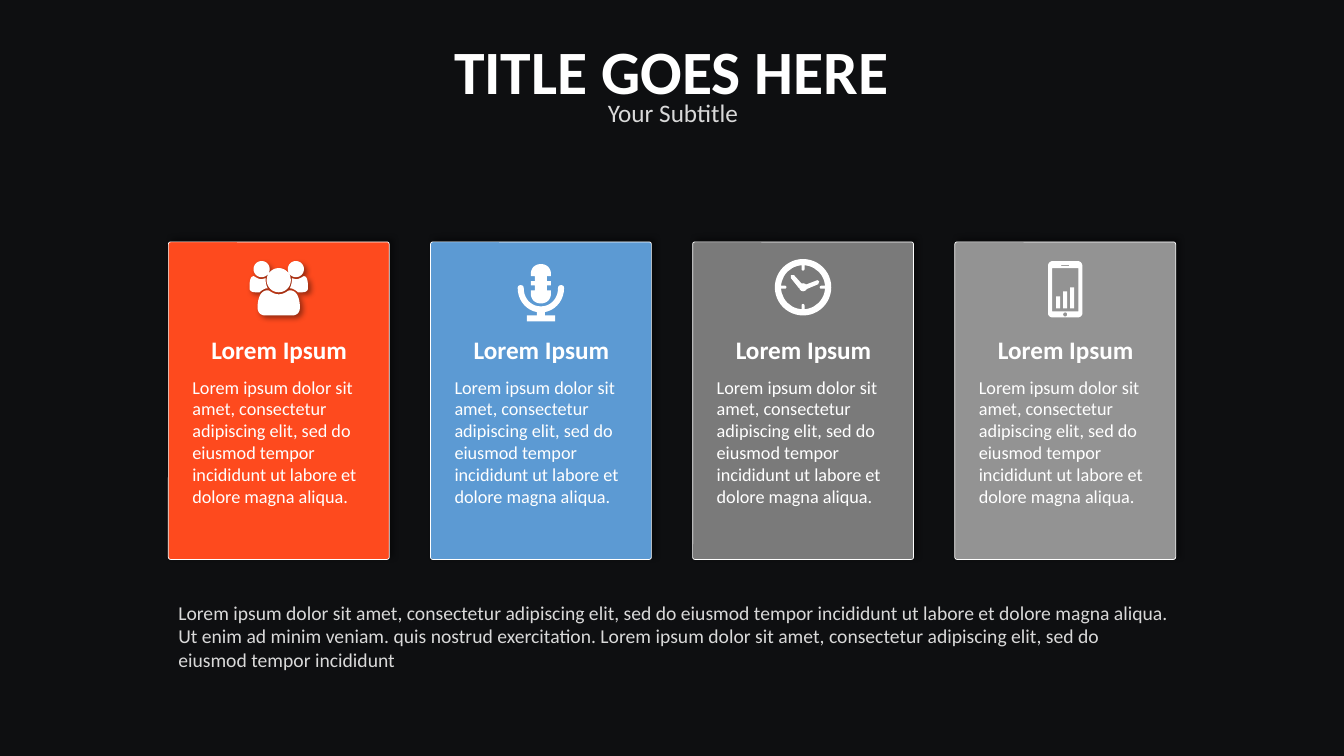
from dataclasses import dataclass
from math import cos, pi, sin

from lxml.etree import SubElement
from pptx import Presentation
from pptx.dml.color import RGBColor
from pptx.enum.shapes import MSO_SHAPE
from pptx.enum.text import MSO_AUTO_SIZE, PP_ALIGN
from pptx.oxml.ns import qn
from pptx.util import Inches, Pt


@dataclass(frozen=True)
class Theme:
    font: str = "Calibri"
    background: str = "0E0F11"
    white: str = "FFFFFF"
    muted: str = "D9D9D9"
    cards: tuple = ("FE4A1E", "5C9AD3", "7A7A7A", "939393")
    title: int = 44
    heading: int = 18
    summary: int = 14
    body: int = 13


THEME = Theme()
CARD_LEFT, CARD_TOP, CARD_PITCH = 1.67, 2.4, 2.6
CARD_WIDTH, CARD_HEIGHT = 2.19, 3.15
ICON_Y = 2.86
CARD_TEXT = ("Lorem ipsum dolor sit amet, consectetur adipiscing elit, sed do "
             "eiusmod tempor incididunt ut labore et dolore magna aliqua.")
SUMMARY = (CARD_TEXT + " Ut enim ad minim veniam. quis nostrud exercitation. "
           "Lorem ipsum dolor sit amet, consectetur adipiscing elit, sed do "
           "eiusmod tempor incididunt")


def add_text(s, text, left, top, width, height, size, color,
             bold=False, align=PP_ALIGN.LEFT):
    tf = s.shapes.add_textbox(Inches(left), Inches(top),
                              Inches(width), Inches(height)).text_frame
    tf.word_wrap = True
    tf.auto_size = MSO_AUTO_SIZE.SHAPE_TO_FIT_TEXT
    tf.text = text
    p = tf.paragraphs[0]
    p.alignment = align
    font = p.runs[0].font
    font.name, font.size, font.bold = THEME.font, Pt(size), bold
    font.color.rgb = RGBColor.from_string(color)


def paint(sp, color):
    sp.shadow.inherit = False
    sp.fill.solid()
    sp.fill.fore_color.rgb = RGBColor.from_string(color)
    sp.line.fill.background()


def add_shadow(sp, angle):
    effects = sp._element.spPr.find(qn("a:effectLst"))
    shadow = SubElement(effects, qn("a:outerShdw"), blurRad=str(Pt(4)),
                        dist=str(Pt(3)), dir=str(angle * 60000), rotWithShape="0")
    black = SubElement(shadow, qn("a:srgbClr"), val="000000")
    SubElement(black, qn("a:alpha"), val="40000")


def add_preset(s, kind, left, top, width, height, color=THEME.white, adjust=None):
    sp = s.shapes.add_shape(kind, Inches(left), Inches(top),
                            Inches(width), Inches(height))
    if adjust is not None:
        sp.adjustments[0] = adjust
    paint(sp, color)
    return sp


def outline(start, *segments):
    points = [start]
    for segment in segments:
        if len(segment) == 2:
            points.append(segment)
            continue
        x0, y0 = points[-1]
        x1, y1, x2, y2, x3, y3 = segment
        for t in (i / 10 for i in range(1, 11)):
            a, b, c, d = (1 - t)**3, 3 * t * (1 - t)**2, 3 * t * t * (1 - t), t**3
            points.append((a * x0 + b * x1 + c * x2 + d * x3,
                           a * y0 + b * y1 + c * y2 + d * y3))
    return points


def mirror(points):
    return [(-x, y) for x, y in reversed(points)]


def symmetric(*path):
    half = outline(*path)
    return half + mirror(half)


def circle(cx, cy, radius):
    return [(cx + radius * cos(i * pi / 20), cy + radius * sin(i * pi / 20))
            for i in range(40)]


def add_outline(s, cx, cy, *contours):
    builder = None
    for contour in contours:
        points = [(Inches(cx + x), Inches(cy + y)) for x, y in contour]
        if builder is None:
            builder = s.shapes.build_freeform(*points[0])
        else:
            builder.move_to(*points[0])
        builder.add_line_segments(points[1:], close=True)
    sp = builder.convert_to_shape()
    paint(sp, THEME.white)
    return sp


def add_people(s, cx, cy):
    side_body = outline(
        (-.19, .04), (-.23, .04), (-.26, .04, -.29, .03, -.29, 0),
        (-.29, -.04, -.29, -.12, -.25, -.12), (-.24, -.12, -.21, -.09, -.17, -.09),
        (-.13, -.1), (-.13, -.08), (-.13, -.05, -.12, -.02, -.11, 0),
        (-.14, 0, -.17, .02, -.19, .04))
    side_head = circle(-.17, -.19, .08)
    front_body = symmetric(
        (0, .27), (-.13, .27), (-.18, .27, -.21, .24, -.21, .19),
        (-.21, .12, -.19, .02, -.11, .02), (-.09, .02, -.06, .06, 0, .06))
    sp = add_outline(s, cx, cy, side_body, mirror(side_body), side_head,
                     mirror(side_head), front_body, circle(0, -.08, .12))
    add_shadow(sp, 45)


def add_microphone(s, cx, cy):
    add_outline(s, cx, cy, symmetric(
        (0, .24), (-.13, .24, -.23, .13, -.23, 0),
        (-.23, -.02, -.22, -.03, -.2, -.03), (-.18, -.03, -.17, -.02, -.17, 0),
        (-.17, .1, -.1, .18, 0, .18)))
    add_outline(s, cx, cy, symmetric(
        (0, -.24), (-.06, -.24, -.1, -.2, -.1, -.14), (-.1, -.12), (-.06, -.12),
        (-.06, -.07), (-.1, -.07), (-.1, -.03), (-.06, -.03), (-.06, .02),
        (-.1, .02), (-.1, .05), (-.1, .11, -.06, .15, 0, .15)))
    add_preset(s, MSO_SHAPE.RECTANGLE, cx - .04, cy + .22, .08, .07)
    add_preset(s, MSO_SHAPE.RECTANGLE, cx - .14, cy + .27, .28, .06)


def add_clock(s, cx, cy):
    add_outline(s, cx, cy, [(0, -.03), (-.04, 0), (-.12, -.1),
                            (-.12, -.13), (-.09, -.13)])
    add_outline(s, cx, cy, [(.03, .01), (.01, -.03), (.14, -.08),
                            (.16, -.07), (.15, -.04)])
    middle = cy - .01
    add_preset(s, MSO_SHAPE.DONUT, cx - .28, middle - .28, .56, .56, adjust=.11)
    add_preset(s, MSO_SHAPE.OVAL, cx - .04, middle - .04, .08, .08)
    for dx, dy in ((0, 1), (0, -1), (1, 0), (-1, 0)):
        width, height = (.11, .03) if dx else (.03, .11)
        add_preset(s, MSO_SHAPE.ROUNDED_RECTANGLE, cx + .22 * dx - width / 2,
                   middle + .22 * dy - height / 2, width, height, adjust=.5)


def add_phone(s, cx, cy):
    case = symmetric((0, -.27), (-.12, -.27), (-.15, -.27, -.17, -.25, -.17, -.22),
                     (-.17, .25), (-.17, .27, -.15, .29, -.12, .29), (0, .29))
    speaker = symmetric((0, -.23), (-.04, -.23), (-.04, -.22), (0, -.22))
    screen = symmetric((0, -.2), (-.13, -.2), (-.13, .23), (0, .23))
    add_outline(s, cx, cy, case, speaker, screen, circle(0, .26, .02))
    for i, height in enumerate((.12, .17, .21)):
        add_preset(s, MSO_SHAPE.RECTANGLE, cx - .09 + .07 * i,
                   cy + .2 - height, .04, height)


def add_card(s, left, color, add_icon):
    sp = add_preset(s, MSO_SHAPE.ROUNDED_RECTANGLE, left, CARD_TOP,
                    CARD_WIDTH, CARD_HEIGHT, color, .01)
    sp.line.color.rgb = RGBColor.from_string(THEME.white)
    sp.line.width = Pt(.5)
    add_shadow(sp, 315)
    add_icon(s, left + CARD_WIDTH / 2, ICON_Y)
    add_text(s, "Lorem Ipsum", left + .1, 3.27, 2, .4, THEME.heading,
             THEME.white, True, PP_ALIGN.CENTER)
    add_text(s, CARD_TEXT, left + .14, 3.68, 2, 1.41, THEME.body, THEME.white)


def main():
    prs = Presentation()
    prs.slide_width, prs.slide_height = Inches(13.33), Inches(7.5)
    s = prs.slides.add_slide(prs.slide_layouts[6])
    s.background.fill.solid()
    s.background.fill.fore_color.rgb = RGBColor.from_string(THEME.background)
    add_text(s, "TITLE GOES HERE", 3.65, .28, 6.02, .84, THEME.title,
             THEME.white, True, PP_ALIGN.CENTER)
    add_text(s, "Your Subtitle", 4.41, .92, 4.53, .4, THEME.heading,
             THEME.muted, align=PP_ALIGN.CENTER)
    icons = (add_people, add_microphone, add_clock, add_phone)
    for i, (color, add_icon) in enumerate(zip(THEME.cards, icons)):
        add_card(s, CARD_LEFT + CARD_PITCH * i, color, add_icon)
    add_text(s, SUMMARY, 1.67, 5.91, 10.05, .81, THEME.summary, THEME.muted)
    prs.save("out.pptx")


if __name__ == "__main__":
    main()
